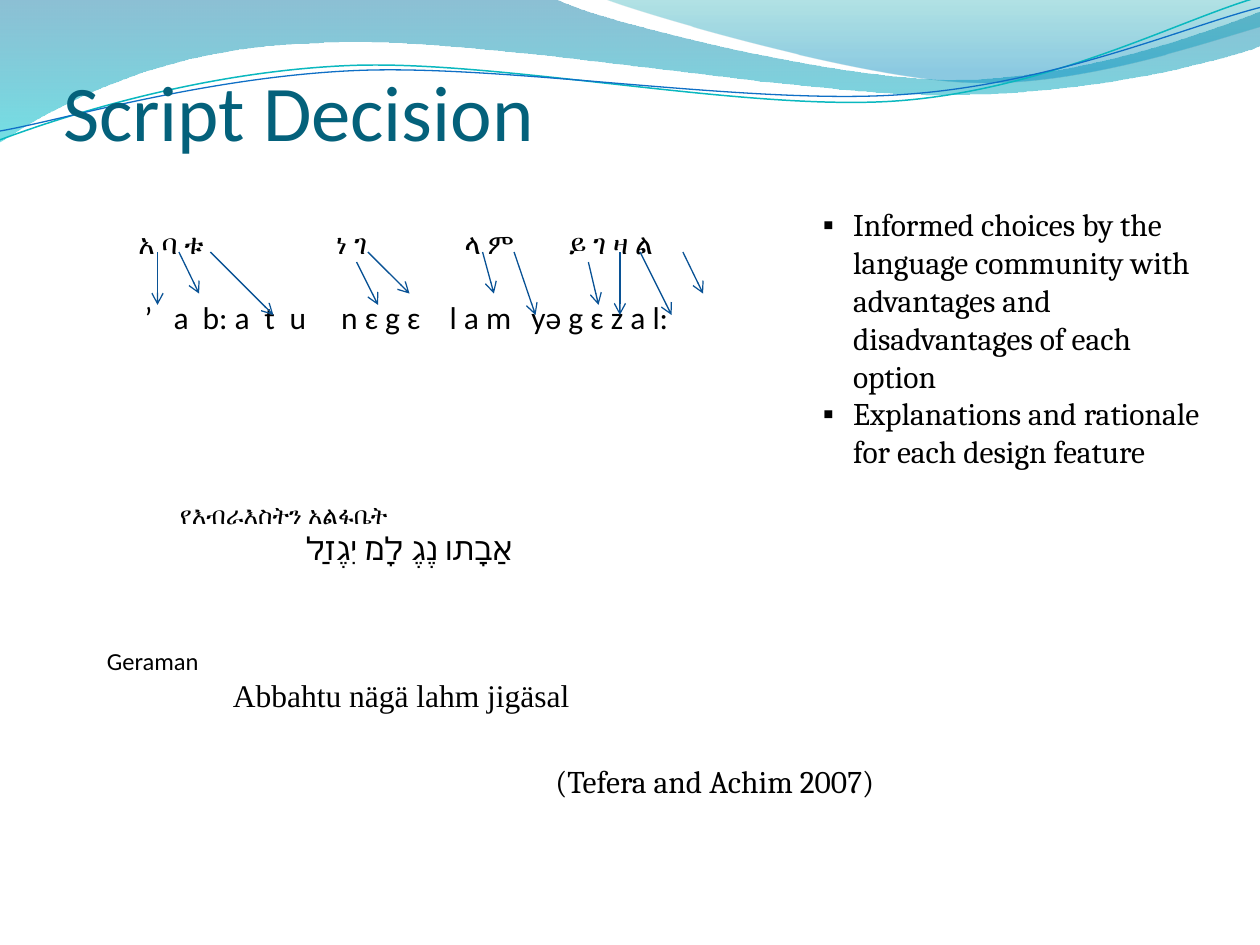
import math

import pptx
import pptx.util
import pptx.dml.color
import pptx.enum.shapes
import pptx.enum.text
import pptx.oxml.ns
from lxml import etree

Inches, Pt = pptx.util.Inches, pptx.util.Pt
RGB = pptx.dml.color.RGBColor.from_string
qn = pptx.oxml.ns.qn
COLORS = {"title": "04617B", "text": "000000", "arrow": "095295",
          "teal_line": "0AB8BF", "blue_line": "0F6FC6",
          "deep": "0074A1", "cyan": "00C6CF", "teal": "00A1A9", "blue": "008BBF"}

prs = pptx.Presentation()
prs.slide_width, prs.slide_height = Inches(10), Inches(7.5)
s = prs.slides.add_slide(prs.slide_layouts[1])


def add_wave(start, segments, closed):
    """Outline from straight (2 numbers) and cubic Bezier (6 numbers) segments."""
    fb = s.shapes.build_freeform(*map(Inches, start))
    points = [(Inches(seg[i]), Inches(seg[i + 1])) for seg in segments for i in range(0, len(seg), 2)]
    fb.add_line_segments(points, close=closed)
    sp = fb.convert_to_shape()
    sp.shadow.inherit = False
    # Each run of three points of a curve becomes one cubic Bezier
    steps = iter(list(sp._element.iter(qn("a:lnTo"))))
    for seg in segments:
        first = next(steps)
        if len(seg) == 6:
            first.tag = qn("a:cubicBezTo")
            for step in (next(steps), next(steps)):
                first.append(step[0])
                step.getparent().remove(step)
    return sp


def style(p, size, font, color="text"):
    for r in p.runs:
        r.font.size, r.font.name = Pt(size), font
        r.font.color.rgb = RGB(COLORS[color])


# Translucent waves: start, segments, gradient stops (position, colour, alpha %)
bands = [
    ((0, 0), [(4.4, -0.01), (4.76, 0.17, 6.64, 0.63, 7.58, 0.63),
              (8.53, 0.63, 9.58, 0.26, 10, 0.09), (10.01, 0.36),
              (9.83, 0.44, 8.7, 0.76, 7.46, 0.75), (6.22, 0.75, 3.82, 0.28, 2.57, 0.34),
              (1.29, 0.36, 0.46, 0.83, -0.01, 1.13), (0, 0)],
     [(0, "deep", 45), (1, "cyan", 55)]),
    ((4.79, -0.01), [(5.09, 0.11, 6.82, 0.62, 7.69, 0.65),
                     (8.56, 0.69, 9.61, 0.32, 10, 0.21), (10, 0), (4.79, -0.01)],
     [(0, "teal", 30), (0.8, "blue", 45)]),
]
for start, segments, stops in bands:
    sp = add_wave(start, segments, True)
    sp.line.fill.background()
    sp.fill.gradient()
    sp.fill.gradient_angle = 270
    for stop, (position, color, alpha) in zip(sp.fill.gradient_stops, stops):
        stop.position = position
        stop.color.rgb = RGB(COLORS[color])
        etree.SubElement(stop.color._color._xClr, qn("a:alpha"), val=str(alpha * 1000))

# Thin wave lines, laid level about their centre and then tilted
curves = [
    ((0, 1.11), [(0.48, 0.93, 1.58, 0.57, 2.77, 0.52), (3.95, 0.47, 5.93, 0.89, 7.13, 0.8),
                 (8.33, 0.71, 9.38, 0.15, 9.98, -0.02)], "teal_line", 0.85),
    ((0, 1.04), [(0.47, 0.96, 1.64, 0.61, 2.83, 0.56), (4.03, 0.51, 5.97, 0.84, 7.17, 0.75),
                 (8.36, 0.67, 9.41, 0.21, 10, 0.06)], "blue_line", 0.75),
]
TILT = 2.7
cos, sin = math.cos(math.radians(TILT)), math.sin(math.radians(TILT))
for start, segments, color, width in curves:
    cx, cy = (start[0] + segments[-1][4]) / 2, (start[1] + segments[-1][5]) / 2 + 0.03
    level = []
    for seg in [start] + segments:
        pairs = [(x - cx, y - cy) for x, y in zip(seg[::2], seg[1::2])]
        level.append([v for x, y in pairs for v in (cx + x * cos - y * sin, cy + x * sin + y * cos)])
    sp = add_wave(level[0], level[1:], False)
    sp.rotation = 360 - TILT
    sp.fill.background()
    sp.line.color.rgb, sp.line.width = RGB(COLORS[color]), Pt(width)

# Title, in front of the waves
title, body = s.shapes.title, s.placeholders[1]
s.shapes.element.append(title.element)
title.left, title.top, title.width, title.height = map(Inches, (0.5, -0.25, 8.92, 1.5))
tf = title.text_frame
tf.text = "Script Decision"
tf.vertical_anchor = pptx.enum.text.MSO_ANCHOR.BOTTOM
tf.auto_size = pptx.enum.text.MSO_AUTO_SIZE.NONE
tf.margin_left = tf.margin_right = tf.margin_bottom = 0
tf.paragraphs[0].alignment = pptx.enum.text.PP_ALIGN.LEFT
style(tf.paragraphs[0], 45, "Calibri", "title")

# Text boxes: place, then lines of (text, size, font, indent, tab stops, space before)
boxes = [
    ((1, 1.75, 7.5, 1.28), [
        ("አ ባ ቱ\tነ ገ\tላ ም\tይ ገ ዛ ል", 16, "Calibri", 0, (1.57, 2.59, 3.42), 0),
        ("ʼ\ta\tb: a\tt\tu\tn ɛ g ɛ\tl a m\tyə g ɛ z a l:", 18, "Calibri", 0.05,
         (0.23, 0.46, 0.95, 1.15, 1.56, 2.42, 3.07), 21.5)]),
    ((0.75, 5.08, 7.42, 0.64), [
        ("Geraman", 14, "Calibri", 0, (), 0),
        ("Abbahtu nägä lahm jigäsal", 18, "Times New Roman", 1, (), 0)]),
    ((1.33, 3.92, 6.42, 0.64), [
        ("የእብራእስትን አልፋቤት", 14, "Calibri", 0, (), 0),
        ("אַבָתו נֶגֶ לָמ יִגֶזַל", 18, "Calibri", 1, (), 0)]),
    ((4.25, 6, 3.33, 0.4), [("(Tefera and Achim 2007)", 18, "Cambria", 0.06, (), 0)]),
]
for place, lines in boxes:
    tf = s.shapes.add_textbox(*map(Inches, place)).text_frame
    tf.word_wrap = True
    for i, (text, size, font, indent, tabs, before) in enumerate(lines):
        p = tf.paragraphs[0] if i == 0 else tf.add_paragraph()
        p.text = text
        pPr = p._p.get_or_add_pPr()
        pPr.set("marL", str(Inches(indent)))
        if tabs:
            tab_list = etree.SubElement(pPr, qn("a:tabLst"))
            for pos in tabs:
                etree.SubElement(tab_list, qn("a:tab"), pos=str(Inches(pos)), algn="l")
        p.space_before = Pt(before)
        style(p, size, font)

# Arrows from each syllable sign to its sounds
arrows = [(1.25, 2, 1.25, 2.42), (1.42, 2, 1.58, 2.33), (1.67, 2, 2.17, 2.5),
          (2.83, 2.08, 3, 2.42), (2.92, 2, 3.25, 2.33), (3.83, 2, 3.92, 2.33),
          (4.08, 2, 4.25, 2.5), (4.92, 2, 4.92, 2.5), (5.42, 2, 5.58, 2.33),
          (5.08, 2, 5.33, 2.5), (4.67, 2.08, 4.75, 2.42)]
for ends in arrows:
    c = s.shapes.add_connector(pptx.enum.shapes.MSO_CONNECTOR.STRAIGHT, *map(Inches, ends))
    c.line.color.rgb, c.line.width = RGB(COLORS["arrow"]), Pt(0.75)
    etree.SubElement(c.line._get_or_add_ln(), qn("a:tailEnd"), type="arrow")
    etree.SubElement(c._element.spPr, qn("a:effectLst"))

# Bulleted list
s.shapes.element.append(body.element)
body.left, body.top, body.width, body.height = map(Inches, (6.17, 1.58, 3.5, 2.83))
tf = body.text_frame
tf.auto_size = pptx.enum.text.MSO_AUTO_SIZE.NONE
tf.text = ("Informed choices by the language community with advantages and "
           "disadvantages of each option\n"
           "Explanations and rationale for each design feature")
for p in tf.paragraphs:
    p.level = 1
    pPr = p._p.get_or_add_pPr()
    pPr.set("marL", str(Inches(0.5)))
    pPr.set("indent", str(Inches(-0.24)))
    etree.SubElement(pPr, qn("a:buChar"), char="▪")
    p.space_before = Pt(0)
    style(p, 18, "Cambria")

prs.save("out.pptx")
